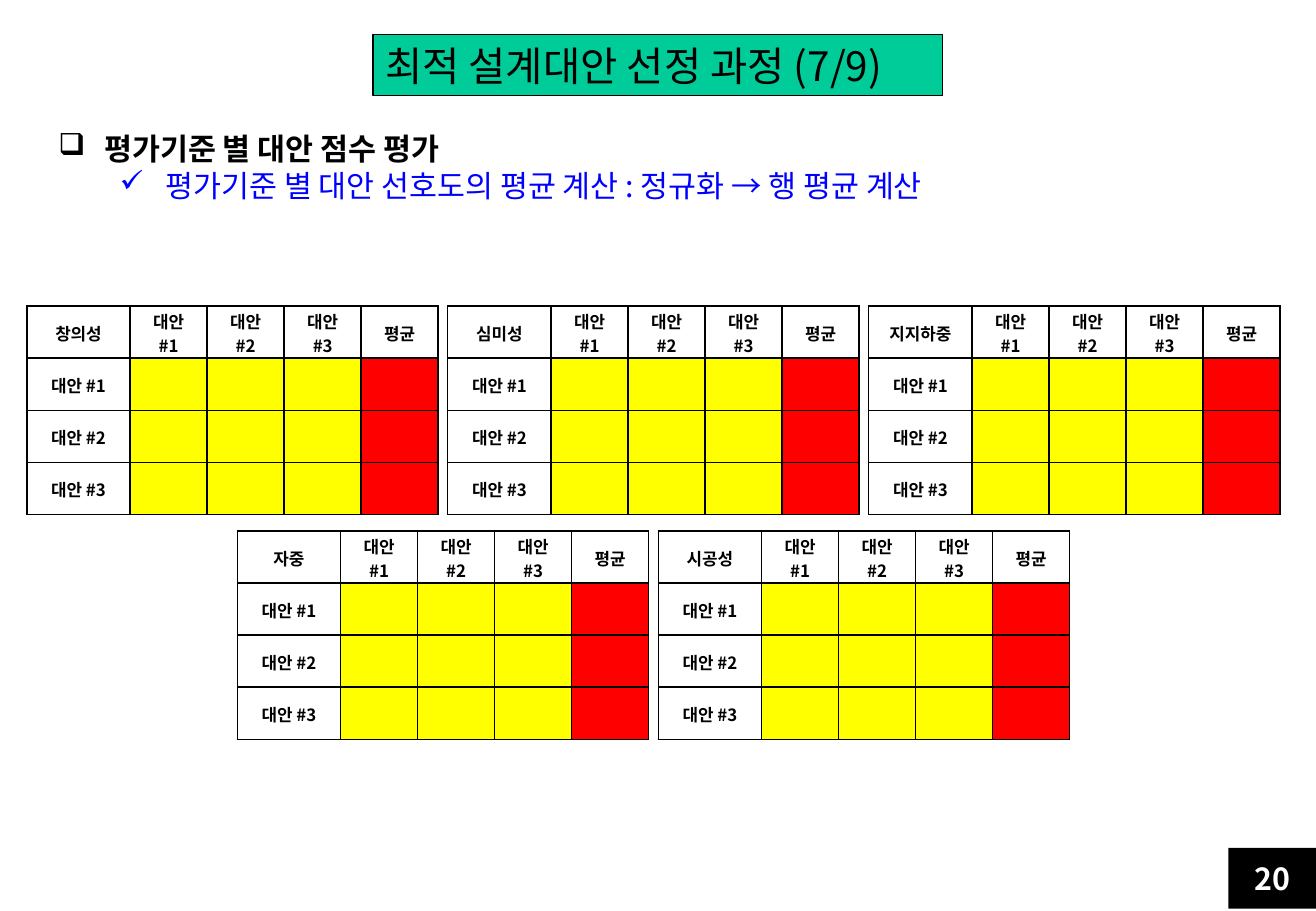
import pptx
import pptx.util
import pptx.dml.color
import pptx.enum.shapes
import pptx.enum.text
import pptx.oxml
import pptx.oxml.ns
from pptx.util import Cm, Pt

# Content
TITLE = "최적 설계대안 선정 과정 (7/9)"
PAGE_NUMBER = "20"
OUTLINE = [
    # text, bullet, level, left margin in cm, colour, bold
    ("평가기준 별 대안 점수 평가", "❑", 0, 0.96, "black", True),
    ("평가기준 별 대안 선호도의 평균 계산 : 정규화 → 행 평균 계산", "✓", 1, 2.24, "blue", False),
]
CRITERIA_ROWS = [["창의성", "심미성", "지지하중"], ["자중", "시공성"]]
ALTERNATIVES = ["대안 #1", "대안 #2", "대안 #3"]
AVERAGE = "평균"

THEME = {
    "font": "Noto Sans CJK KR",
    "black": "000000", "white": "FFFFFF", "blue": "0000FF",
    "title_fill": "00CC99", "score": "FFFF00", "average": "FF0000",
    "title_size": 24, "body_size": 18, "table_size": 10,
}

# Layout in cm
SLIDE_W, SLIDE_H = 27.51, 19.05
TABLE_LEFT, TABLE_TOP = 0.56, 6.4
TABLE_PITCH_X, TABLE_PITCH_Y = 8.8, 4.7
COLUMN_WIDTHS = [2.16] + [1.61] * 4
ROW_H = 1.09
HANGING = 0.96

PP_ALIGN = pptx.enum.text.PP_ALIGN
MIDDLE = pptx.enum.text.MSO_ANCHOR.MIDDLE


def rgb(key):
    return pptx.dml.color.RGBColor.from_string(THEME[key])


def add_text(paragraph, text, size, color="black", bold=False, align=PP_ALIGN.LEFT):
    paragraph.alignment = align
    run = paragraph.add_run()
    run.text = text
    run.font.size = Pt(THEME[size])
    run.font.bold = bold
    run.font.name = THEME["font"]
    run.font.color.rgb = rgb(color)
    east_asian = pptx.oxml.parse_xml(
        f'<a:ea {pptx.oxml.ns.nsdecls("a")} typeface="{THEME["font"]}"/>')
    run.font._element.append(east_asian)


def add_box(slide, left, top, width, height, fill):
    box = slide.shapes.add_shape(pptx.enum.shapes.MSO_SHAPE.RECTANGLE,
                                 Cm(left), Cm(top), Cm(width), Cm(height))
    box.shadow.inherit = False
    box.fill.solid()
    box.fill.fore_color.rgb = rgb(fill)
    box.line.fill.background()
    box.text_frame.vertical_anchor = MIDDLE
    return box


def set_bullet(paragraph, bullet, margin):
    properties = paragraph._p.get_or_add_pPr()
    properties.set("marL", str(Cm(margin)))
    properties.set("indent", str(-Cm(HANGING)))
    properties.append(pptx.oxml.parse_xml(
        f'<a:buChar {pptx.oxml.ns.nsdecls("a")} char="{bullet}"/>'))


def set_borders(cell):
    properties = cell._tc.get_or_add_tcPr()
    for position, side in enumerate(("lnL", "lnR", "lnT", "lnB")):
        properties.insert(position, pptx.oxml.parse_xml(
            f'<a:{side} {pptx.oxml.ns.nsdecls("a")} w="{Pt(1)}"><a:solidFill>'
            f'<a:srgbClr val="{THEME["black"]}"/></a:solidFill></a:{side}>'))


def add_score_table(slide, criterion, left, top):
    header = [criterion] + ALTERNATIVES + [AVERAGE]
    rows = [header] + [[name] + [""] * (len(header) - 1) for name in ALTERNATIVES]
    table = slide.shapes.add_table(len(rows), len(header), Cm(left), Cm(top),
                                   Cm(sum(COLUMN_WIDTHS)), Cm(ROW_H * len(rows))).table
    for column, width in zip(table.columns, COLUMN_WIDTHS):
        column.width = Cm(width)
    for r, row in enumerate(rows):
        table.rows[r].height = Cm(ROW_H)
        for c, text in enumerate(row):
            cell = table.cell(r, c)
            cell.vertical_anchor = MIDDLE
            cell.margin_top, cell.margin_bottom = Cm(0.05), Cm(0)
            fill = "white" if text else "average" if c == len(row) - 1 else "score"
            cell.fill.solid()
            cell.fill.fore_color.rgb = rgb(fill)
            set_borders(cell)
            if text:
                add_text(cell.text_frame.paragraphs[0], text, "table_size",
                         bold=True, align=PP_ALIGN.CENTER)


def main():
    deck = pptx.Presentation()
    deck.slide_width, deck.slide_height = Cm(SLIDE_W), Cm(SLIDE_H)
    slide = deck.slides.add_slide(deck.slide_layouts[6])

    # Page number
    page = add_box(slide, 25.68, 17.73, 1.83, 1.27, "black")
    add_text(page.text_frame.paragraphs[0], PAGE_NUMBER, "body_size", "white", True,
             PP_ALIGN.CENTER)

    # Title
    title = add_box(slide, 7.8, 0.73, 11.91, 1.27, "title_fill")
    title.line.color.rgb = rgb("black")
    title.line.width = Pt(0.75)
    add_text(title.text_frame.paragraphs[0], TITLE, "title_size")

    # Outline
    outline = slide.shapes.add_textbox(Cm(0.97), Cm(2.72), Cm(25.4), Cm(14.8)).text_frame
    outline.word_wrap = True
    for i, (text, bullet, level, margin, color, bold) in enumerate(OUTLINE):
        paragraph = outline.add_paragraph() if i else outline.paragraphs[0]
        paragraph.level = level
        paragraph.line_spacing = 0.85
        paragraph.space_before = paragraph.space_after = Pt(1.8)
        set_bullet(paragraph, bullet, margin)
        add_text(paragraph, text, "body_size", color, bold)

    # Score tables, each shorter row centred under the first
    for r, criteria in enumerate(CRITERIA_ROWS):
        row_left = TABLE_LEFT + (len(CRITERIA_ROWS[0]) - len(criteria)) * TABLE_PITCH_X / 2
        for c, criterion in enumerate(criteria):
            add_score_table(slide, criterion, row_left + c * TABLE_PITCH_X,
                            TABLE_TOP + r * TABLE_PITCH_Y)

    deck.save("out.pptx")


if __name__ == "__main__":
    main()
